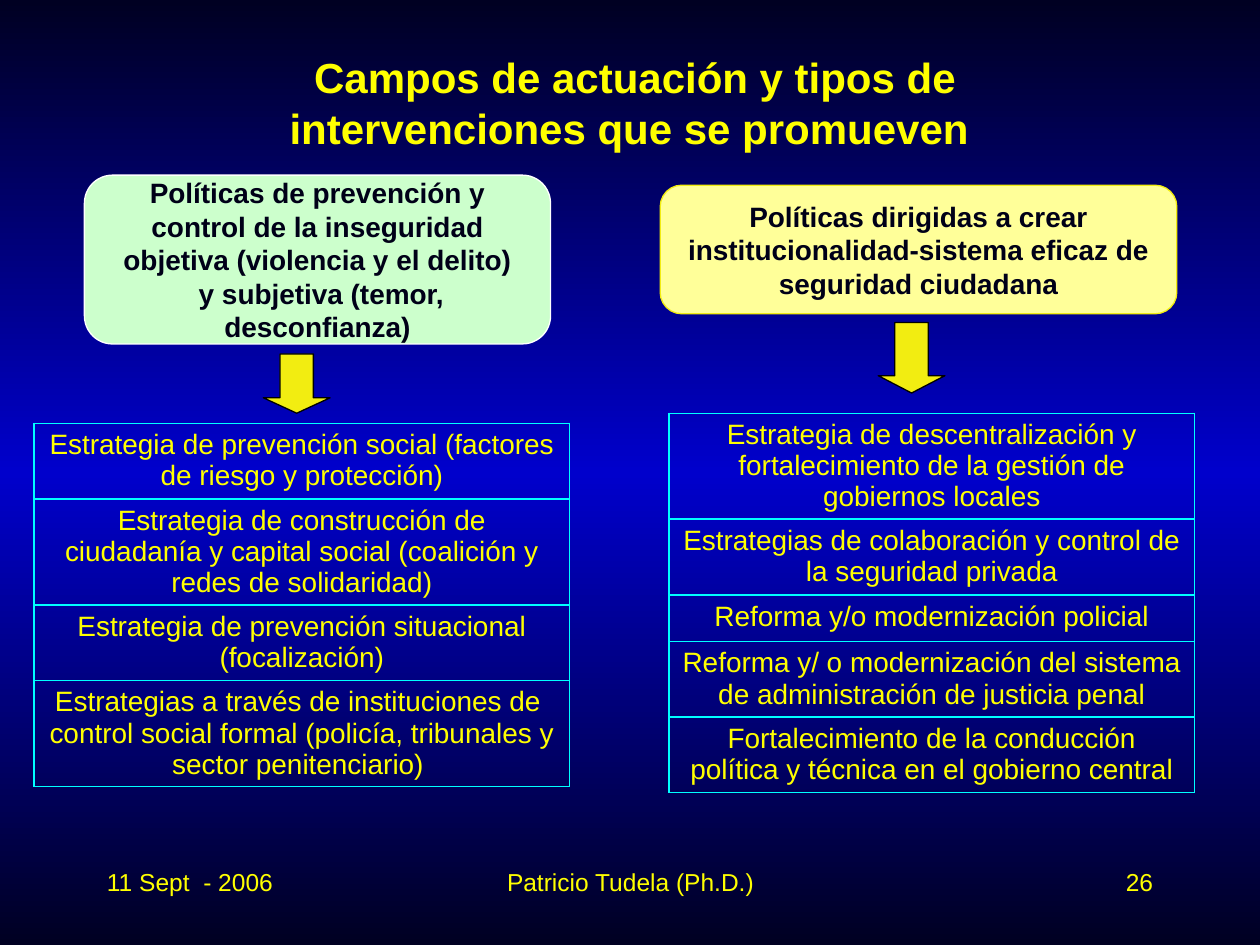
from copy import deepcopy

from lxml.etree import SubElement
from pptx import Presentation
from pptx.dml.color import RGBColor
from pptx.enum.shapes import MSO_SHAPE
from pptx.enum.text import MSO_ANCHOR, PP_ALIGN
from pptx.oxml.ns import qn
from pptx.util import Inches, Pt

FONT = "Arial"
YELLOW = RGBColor(0xFF, 0xFF, 0x00)
GOLD = RGBColor(0xF2, 0xED, 0x11)
PALE_YELLOW = RGBColor(0xFF, 0xFF, 0x99)
PALE_GREEN = RGBColor(0xCC, 0xFF, 0xCC)
CYAN = RGBColor(0x00, 0xFF, 0xFF)
WHITE = RGBColor(0xFF, 0xFF, 0xFF)
BLACK = RGBColor(0x00, 0x00, 0x00)
INK = RGBColor(0x00, 0x00, 0x18)
NIGHT = RGBColor(0x00, 0x00, 0x22)
BLUE = RGBColor(0x00, 0x00, 0xCC)

TITLE = "Campos de actuación y tipos de intervenciones que se promueven "

# Boxes are left, top, width, height in inches.
COLUMNS = [
    {
        "policy_box": (0.67, 1.39, 3.7, 1.34),
        "policy": ["Políticas de prevención y control de la inseguridad objetiva "
                   "(violencia y el delito)",
                   " y subjetiva (temor, desconfianza)"],
        "fill": PALE_GREEN,
        "outline": WHITE,
        "arrow_box": (2.09, 2.81, 0.53, 0.47),
        "table_box": (0.27, 3.36, 4.25),
        "strategies": [
            ("Estrategia de prevención social (factores de riesgo y protección)", 0.6),
            ("Estrategia de construcción de ciudadanía y capital social "
             "(coalición y redes de solidaridad)", 0.84),
            ("Estrategia de prevención situacional (focalización)", 0.6),
            ("Estrategias a través de instituciones de  control social formal "
             "(policía, tribunales y sector penitenciario) ", 0.84),
        ],
    },
    {
        "policy_box": (5.24, 1.47, 4.1, 1.02),
        "policy": ["Políticas dirigidas a crear institucionalidad-sistema eficaz "
                   "de seguridad ciudadana"],
        "fill": PALE_YELLOW,
        "outline": GOLD,
        "arrow_box": (6.97, 2.56, 0.53, 0.56),
        "table_box": (5.31, 3.28, 4.17),
        "strategies": [
            ("Estrategia de descentralización y fortalecimiento de la gestión "
             "de gobiernos locales", 0.84),
            ("Estrategias de colaboración y control de la seguridad privada", 0.6),
            ("Reforma y/o modernización policial", 0.37),
            ("Reforma y/ o modernización del sistema de administración de "
             "justicia penal", 0.6),
            ("Fortalecimiento de la conducción política y técnica en el "
             "gobierno central", 0.6),
        ],
    },
]

FOOTER = [
    ("11 Sept  - 2006", (0.75, 6.83, 2.08, 0.5), PP_ALIGN.LEFT),
    ("Patricio Tudela (Ph.D.)", (3.42, 6.83, 3.17, 0.5), PP_ALIGN.CENTER),
    ("26", (7.17, 6.83, 2.08, 0.5), PP_ALIGN.RIGHT),
]


def inches(box):
    return [Inches(length) for length in box]


def write(frame, lines, size, color, bold=False, align=PP_ALIGN.CENTER):
    frame.word_wrap = True
    frame.text = "\n".join(lines)
    for paragraph in frame.paragraphs:
        paragraph.alignment = align
        font = paragraph.font
        font.name, font.size, font.bold = FONT, Pt(size), bold
        font.color.rgb = color


def paint_background(slide):
    fill = slide.background.fill
    fill.gradient()
    fill.gradient_angle = 90
    stop_list = slide.element.find(".//" + qn("a:gsLst"))
    stop_list.append(deepcopy(stop_list[-1]))
    for stop, position, color in zip(fill.gradient_stops, (0, 0.5, 1),
                                     (NIGHT, BLUE, NIGHT)):
        stop.position = position
        stop.color.rgb = color


def add_title(slide, box):
    title = slide.shapes.title
    title.left, title.top, title.width, title.height = inches(box)
    frame = title.text_frame
    write(frame, [TITLE], 24, YELLOW, bold=True)
    frame.vertical_anchor = MSO_ANCHOR.TOP
    properties = frame.paragraphs[0].runs[0].font
    properties.bold = True
    run_properties = title.element.find(".//" + qn("a:rPr"))
    effects = SubElement(run_properties, qn("a:effectLst"))
    shadow = SubElement(effects, qn("a:outerShdw"), dist="38100", dir="2700000")
    SubElement(shadow, qn("a:srgbClr"), val=str(BLACK))


def add_outlined_shape(slide, kind, box, fill, outline):
    shape = slide.shapes.add_shape(kind, *inches(box))
    shape.shadow.inherit = False
    shape.fill.solid()
    shape.fill.fore_color.rgb = fill
    shape.line.color.rgb = outline
    shape.line.width = Pt(0.75)
    return shape


def add_borders(cell):
    properties = cell._tc.get_or_add_tcPr()
    for position, side in enumerate(("a:lnL", "a:lnR", "a:lnT", "a:lnB")):
        border = properties.makeelement(qn(side), {"w": str(Pt(1))})
        solid = SubElement(border, qn("a:solidFill"))
        SubElement(solid, qn("a:srgbClr"), val=str(CYAN))
        properties.insert(position, border)


def add_strategy_table(slide, box, strategies):
    left, top, width = box
    height = sum(row_height for _, row_height in strategies)
    table = slide.shapes.add_table(
        len(strategies), 1, *inches((left, top, width, height))).table
    table.first_row = table.horz_banding = False
    for row, (strategy, row_height) in zip(table.rows, strategies):
        row.height = Inches(row_height)
        cell = row.cells[0]
        write(cell.text_frame, [strategy], 16, YELLOW)
        cell.fill.background()
        add_borders(cell)


def add_column(slide, column):
    """Add a policy, the arrow below it and its table of strategies."""
    policy = add_outlined_shape(slide, MSO_SHAPE.FLOWCHART_ALTERNATE_PROCESS,
                                column["policy_box"], column["fill"],
                                column["outline"])
    write(policy.text_frame, column["policy"], 16, INK, bold=True)
    policy.text_frame.vertical_anchor = MSO_ANCHOR.MIDDLE
    arrow = add_outlined_shape(slide, MSO_SHAPE.DOWN_ARROW,
                               column["arrow_box"], GOLD, BLACK)
    arrow.adjustments[1] = 0.26
    add_strategy_table(slide, column["table_box"], column["strategies"])


def add_footer(slide):
    for text, box, align in FOOTER:
        frame = slide.shapes.add_textbox(*inches(box)).text_frame
        write(frame, [text], 14, YELLOW, align=align)


def main():
    presentation = Presentation()
    presentation.slide_width, presentation.slide_height = Inches(10), Inches(7.5)
    slide = presentation.slides.add_slide(presentation.slide_layouts[5])
    paint_background(slide)
    add_title(slide, (1.22, 0.36, 7.64, 0.9))
    for column in COLUMNS:
        add_column(slide, column)
    add_footer(slide)
    presentation.save("out.pptx")


if __name__ == "__main__":
    main()
